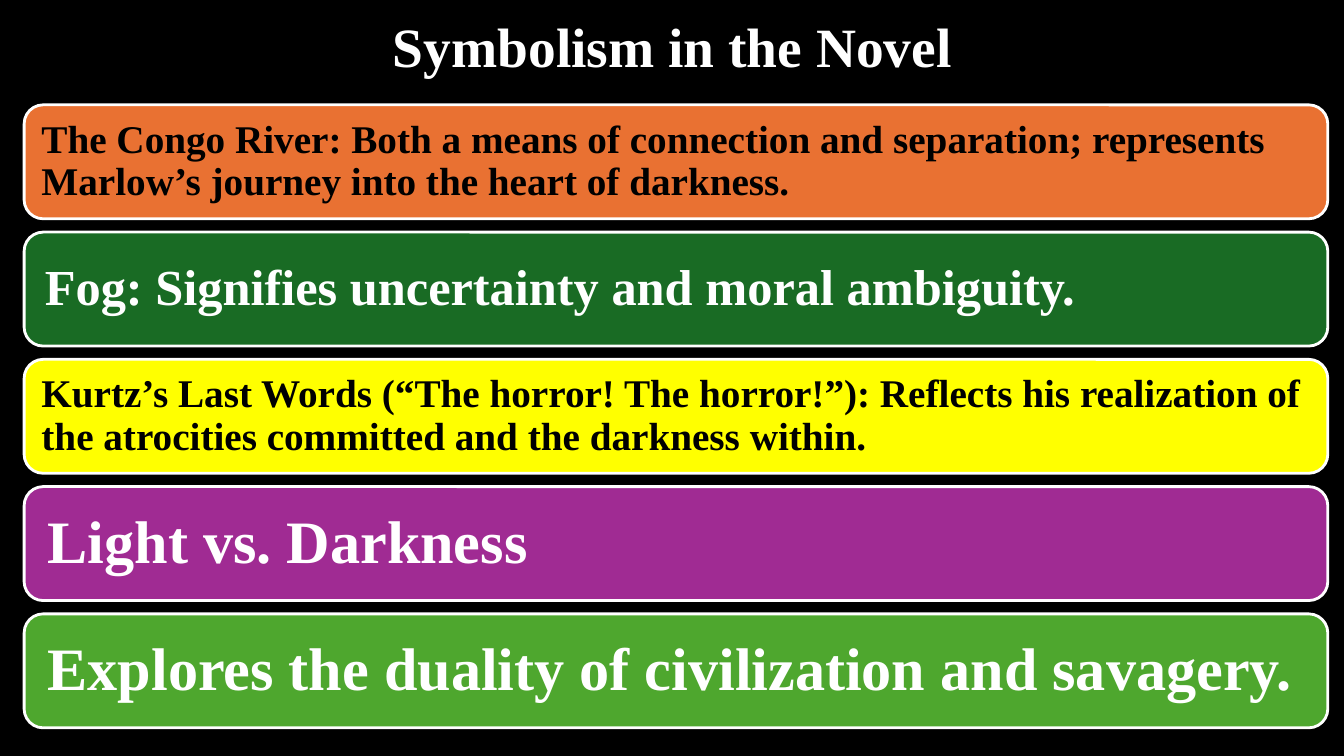
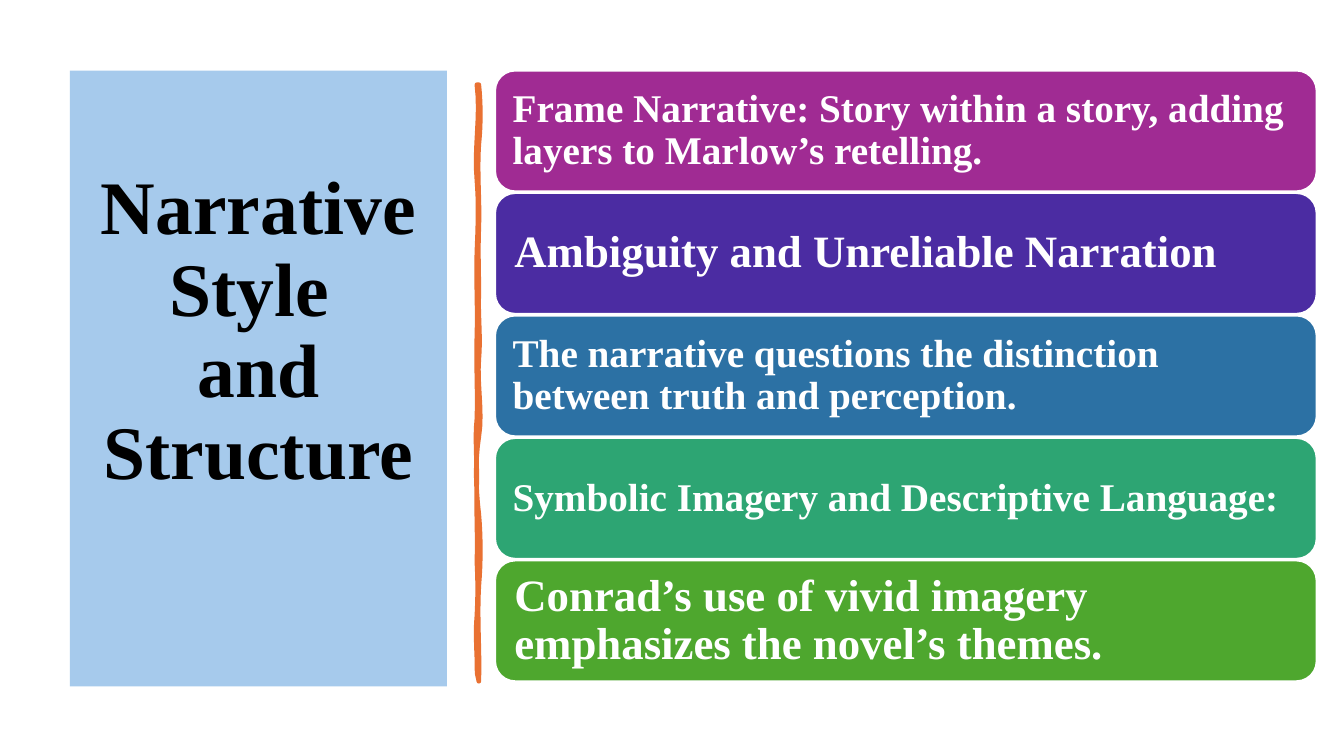
from dataclasses import dataclass
from typing import NamedTuple

from pptx import Presentation
from pptx.dml.color import RGBColor
from pptx.enum.shapes import MSO_SHAPE
from pptx.enum.text import MSO_ANCHOR, MSO_AUTO_SIZE, PP_ALIGN
from pptx.util import Inches, Pt

WIDTH, HEIGHT = Inches(13.33), Inches(7.5)


@dataclass(frozen=True)
class Theme:
    font: str = "Times New Roman"
    black: str = "000000"
    white: str = "FFFFFF"
    orange: str = "E97132"
    forest: str = "196B24"
    yellow: str = "FFFF00"
    purple: str = "A02B93"
    green: str = "4EA72E"
    indigo: str = "4B2CA2"
    blue: str = "2C71A4"
    teal: str = "2DA573"
    sky: str = "A6CAEC"
    heading: float = 39.6
    display: float = 54
    small: float = 28
    medium: float = 32
    large: float = 36
    huge: float = 43
    leading: float = 0.9
    inset: float = 0.3


THEME = Theme()


class Box(NamedTuple):
    """Left, top, width and height in percent of the slide."""
    left: float
    top: float
    width: float
    height: float

    def emu(self) -> tuple[int, int, int, int]:
        return (round(self.left * WIDTH / 100), round(self.top * HEIGHT / 100),
                round(self.width * WIDTH / 100), round(self.height * HEIGHT / 100))


class Band(NamedTuple):
    text: str
    fill: str
    size: float
    ink: str = THEME.white


class Stack(NamedTuple):
    """Area in percent of the slide, with the height of one band."""
    area: Box
    band: float
    line: float


class Bend(NamedTuple):
    """Two sideways pulls in rule widths, and the end in percent of its length."""
    first: float
    last: float
    end: float


RIGHT = [Bend(1, 1, 10), Bend(-1, 0.5, 24), Bend(-0.5, 0, 35), Bend(-0.5, 1, 46),
         Bend(-1, 2, 59), Bend(-2, -1.5, 72), Bend(1, 1, 84), Bend(-1, 0.5, 100)]
LEFT = [Bend(0.5, -1, 89), Bend(0.5, 0.5, 80), Bend(0.5, -0.5, 66), Bend(0, -1, 56),
        Bend(0.5, -0.5, 42), Bend(0.5, -0.5, 28), Bend(0.5, 1, 16), Bend(-1.5, 2, 0)]

SYMBOLS = [
    Band("The Congo River: Both a means of connection and separation; represents "
         "Marlow’s journey into the heart of darkness.",
         THEME.orange, THEME.small, THEME.black),
    Band("Fog: Signifies uncertainty and moral ambiguity.", THEME.forest, THEME.large),
    Band("Kurtz’s Last Words (“The horror! The horror!”): Reflects his realization of "
         "the atrocities committed and the darkness within.",
         THEME.yellow, THEME.small, THEME.black),
    Band("Light vs. Darkness", THEME.purple, THEME.huge),
    Band("Explores the duality of civilization and savagery.", THEME.green, THEME.huge),
]
STYLES = [
    Band("Frame Narrative: Story within a story, adding layers to Marlow’s retelling.",
         THEME.purple, THEME.small),
    Band("Ambiguity and Unreliable Narration", THEME.indigo, THEME.medium),
    Band("The narrative questions the distinction between truth and perception.",
         THEME.blue, THEME.small),
    Band("Symbolic Imagery and Descriptive Language:", THEME.teal, THEME.small),
    Band("Conrad’s use of vivid imagery emphasizes the novel’s themes.",
         THEME.green, THEME.medium),
]


def paint(target, color: str) -> None:
    target.fill.solid()
    target.fill.fore_color.rgb = RGBColor.from_string(color)


def edge(shape, color: str, width: float) -> None:
    shape.line.color.rgb = RGBColor.from_string(color)
    shape.line.width = Pt(width)


def write(shape, lines: list[str], size: float, ink: str, align: PP_ALIGN) -> None:
    frame = shape.text_frame
    frame.word_wrap = True
    frame.auto_size = MSO_AUTO_SIZE.NONE
    frame.vertical_anchor = MSO_ANCHOR.MIDDLE
    para = frame.paragraphs[0]
    para.alignment = align
    para.line_spacing = THEME.leading
    for index, line in enumerate(lines):
        if index:
            para.add_line_break()
        run = para.add_run()
        run.text = line
        run.font.name = THEME.font
        run.font.size = Pt(size)
        run.font.bold = True
        run.font.color.rgb = RGBColor.from_string(ink)


def start(deck, back: str, lines: list[str], box: Box, size: float, ink: str):
    """Add a slide with its background and title."""
    slide = deck.slides.add_slide(deck.slide_layouts[5])
    paint(slide.background, back)
    title = slide.shapes.title
    title.left, title.top, title.width, title.height = box.emu()
    write(title, lines, size, ink, PP_ALIGN.CENTER)
    return slide


def pile(slide, stack: Stack, bands: list[Band]) -> None:
    """Spread the bands evenly from the top to the bottom of the area."""
    area = stack.area
    step = (area.height - stack.band) / (len(bands) - 1)
    for row, band in enumerate(bands):
        box = Box(area.left, area.top + row * step, area.width, stack.band)
        shape = slide.shapes.add_shape(MSO_SHAPE.ROUNDED_RECTANGLE, *box.emu())
        shape.shadow.inherit = False
        paint(shape, band.fill)
        edge(shape, THEME.white, stack.line)
        frame = shape.text_frame
        pad = Pt(band.size * THEME.inset)
        frame.margin_left = frame.margin_right = pad
        frame.margin_top = frame.margin_bottom = pad
        write(shape, [band.text], band.size, band.ink, PP_ALIGN.LEFT)


def trace(side: float, begin: float, bends: list[Bend], box: Box) -> list[tuple[int, int]]:
    """Sample one wavy side of the rule as points."""
    left, top, width, height = box.emu()
    points = []
    for bend in bends:
        for part in range(1, 9):
            t = part / 8
            pull = 3 * t * (1 - t) * ((1 - t) * bend.first + t * bend.last)
            down = begin + (bend.end - begin) * t
            points.append((round(left + (side + pull) * width),
                           round(top + down * height / 100)))
        begin = bend.end
    return points


def wave(slide, box: Box) -> None:
    """Draw an upright rule with uneven, hand-drawn sides."""
    left, top, width, _ = box.emu()
    pen = slide.shapes.build_freeform(left + width, top)
    pen.add_line_segments(trace(1, 0, RIGHT, box) + trace(0, 100, LEFT, box))
    rule = pen.convert_to_shape()
    rule.shadow.inherit = False
    paint(rule, THEME.orange)
    edge(rule, THEME.orange, 3.25)


def symbols(deck) -> None:
    slide = start(deck, THEME.black, ["Symbolism in the Novel"],
                  Box(6.9, 1.6, 86.25, 10), THEME.heading, THEME.white)
    pile(slide, Stack(Box(1.8, 13.87, 97, 82.4), 15.07, 2), SYMBOLS)


def styles(deck) -> None:
    slide = start(deck, THEME.white, ["Narrative Style ", "and Structure"],
                  Box(5.2, 9.33, 28.05, 81.47), THEME.display, THEME.black)
    title = slide.shapes.title
    paint(title, THEME.sky)
    title.text_frame.margin_bottom = Inches(0.96)
    wave(slide, Box(35.48, 11.2, 0.15, 78.93))
    pile(slide, Stack(Box(36.83, 9.33, 61.14, 80.8), 16, 1.5), STYLES)


def main() -> None:
    deck = Presentation()
    deck.slide_width, deck.slide_height = WIDTH, HEIGHT
    symbols(deck)
    styles(deck)
    deck.save("out.pptx")


if __name__ == "__main__":
    main()
